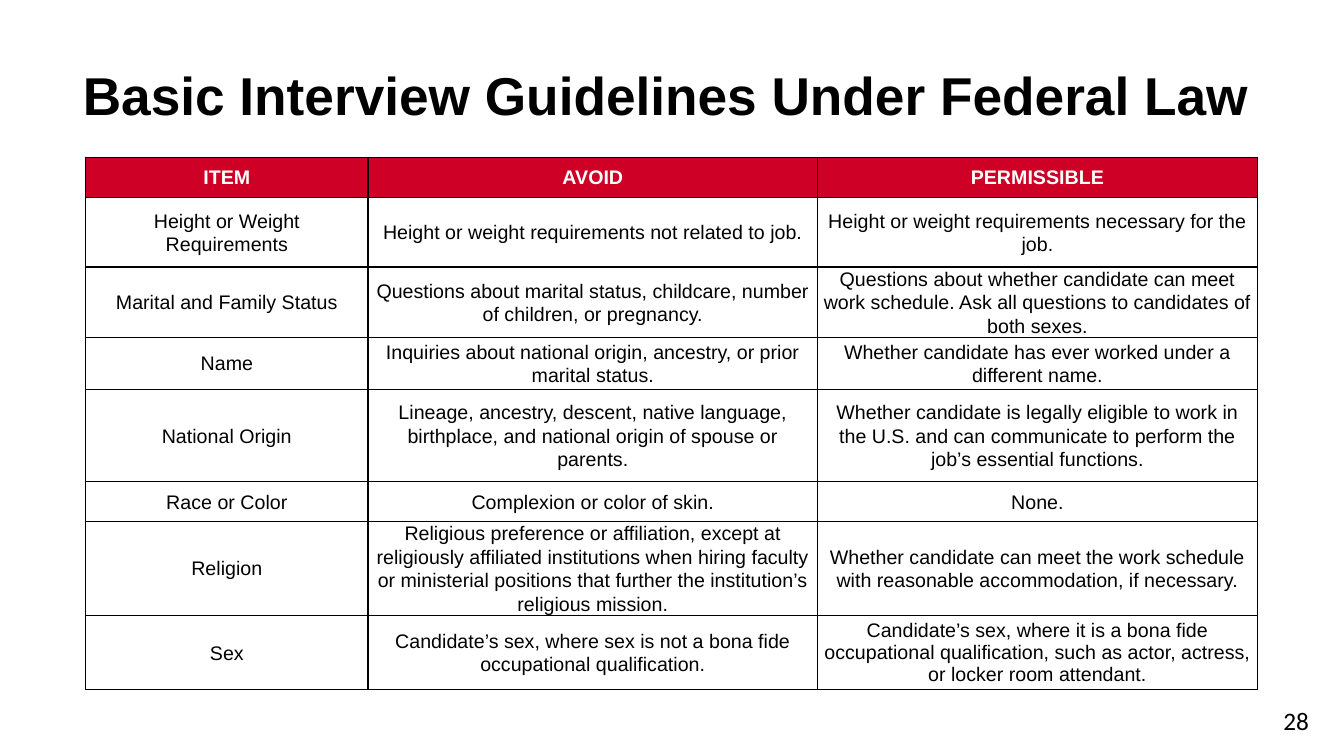
from pptx import Presentation
from pptx.dml.color import RGBColor
from pptx.enum.text import MSO_ANCHOR as Anchor, PP_ALIGN as Align
from pptx.oxml import parse_xml
from pptx.oxml.ns import nsdecls
from pptx.util import Inches, Pt

BLACK, WHITE, RED = "000000", "FFFFFF", "CE0026"

COLS = [2.8, 4.46, 4.36]
HEIGHTS = [0.4, 0.69, 0.69, 0.51, 0.92, 0.39, 0.92, 0.74]
GUIDE = [
    ("ITEM", "AVOID", "PERMISSIBLE"),
    ("Height or Weight Requirements",
     "Height or weight requirements not related to job.",
     "Height or weight requirements necessary for the job."),
    ("Marital and Family Status",
     "Questions about marital status, childcare, number of children, or pregnancy.",
     "Questions about whether candidate can meet work schedule. "
     "Ask all questions to candidates of both sexes."),
    ("Name",
     "Inquiries about national origin, ancestry, or prior marital status.",
     "Whether candidate has ever worked under a different name."),
    ("National Origin",
     "Lineage, ancestry, descent, native language, birthplace, "
     "and national origin of spouse or parents.",
     "Whether candidate is legally eligible to work in the U.S. "
     "and can communicate to perform the job’s essential functions."),
    ("Race or Color", "Complexion or color of skin.", "None."),
    ("Religion",
     "Religious preference or affiliation, except at religiously affiliated "
     "institutions when hiring faculty or ministerial positions that further "
     "the institution’s religious mission.",
     "Whether candidate can meet the work schedule with reasonable "
     "accommodation, if necessary."),
    ("Sex",
     "Candidate’s sex, where sex is not a bona fide occupational qualification.",
     "Candidate’s sex, where it is a bona fide occupational qualification, "
     "such as actor, actress, or locker room attendant."),
]


def color(code):
    return RGBColor.from_string(code)


class Deck:
    font = "Arial"

    def __init__(self):
        self.file = Presentation()
        self.file.slide_width = Inches(13.33)
        self.file.slide_height = Inches(7.5)
        self.slide = self.file.slides.add_slide(self.file.slide_layouts[5])

    def label(self, frame, text, size, tint=BLACK, bold=False, align=Align.CENTER, font=None):
        frame.word_wrap = True
        para = frame.paragraphs[0]
        para.text = text
        para.alignment = align
        para.font.name = font or self.font
        para.font.size = Pt(size)
        para.font.bold = bold
        para.font.color.rgb = color(tint)
        return para

    def title(self, text, left, top, width, height):
        shape = self.slide.shapes.title
        shape.left, shape.top = Inches(left), Inches(top)
        shape.width, shape.height = Inches(width), Inches(height)
        shape.text_frame.vertical_anchor = Anchor.MIDDLE
        self.label(shape.text_frame, text, 38, bold=True)

    def number(self, text, left, top, width, height):
        box = self.slide.shapes.add_textbox(
            Inches(left), Inches(top), Inches(width), Inches(height))
        self.label(box.text_frame, text, 18, align=Align.LEFT, font="Calibri")

    def border(self, cell):
        props = cell._tc.get_or_add_tcPr()
        for side in "LRTB":
            props.append(parse_xml(
                f'<a:ln{side} {nsdecls("a")} w="{Pt(1)}"><a:solidFill>'
                f'<a:srgbClr val="{BLACK}"/></a:solidFill></a:ln{side}>'))

    def cell(self, cell, text, head):
        cell.vertical_anchor = Anchor.MIDDLE
        cell.margin_left = cell.margin_right = Inches(0.07 if head else 0.06)
        cell.margin_top = cell.margin_bottom = 0
        self.border(cell)
        if head:
            cell.fill.solid()
            cell.fill.fore_color.rgb = color(RED)
        else:
            cell.fill.background()
        para = self.label(cell.text_frame, text, 14, WHITE if head else BLACK, head)
        para.line_spacing = 1.07

    def table(self, data, left, top, widths, heights):
        grid = self.slide.shapes.add_table(
            len(data), len(widths), Inches(left), Inches(top),
            Inches(sum(widths)), Inches(sum(heights))).table
        grid.horz_banding = False
        for col, width in zip(grid.columns, widths):
            col.width = Inches(width)
        for row, height in zip(grid.rows, heights):
            row.height = Inches(height)
        for r, line in enumerate(data):
            for c, text in enumerate(line):
                self.cell(grid.cell(r, c), text, r == 0)
        return grid


def main():
    deck = Deck()
    deck.title("Basic Interview Guidelines Under Federal Law", 0.47, 0.56, 12.27, 0.74)
    grid = deck.table(GUIDE, 0.85, 1.56, COLS, HEIGHTS)
    last = grid.cell(len(GUIDE) - 1, len(COLS) - 1)
    last.text_frame.paragraphs[0].line_spacing = 1.0
    deck.number("28", 12.63, 6.95, 0.61, 0.4)
    deck.file.save("out.pptx")


if __name__ == "__main__":
    main()
